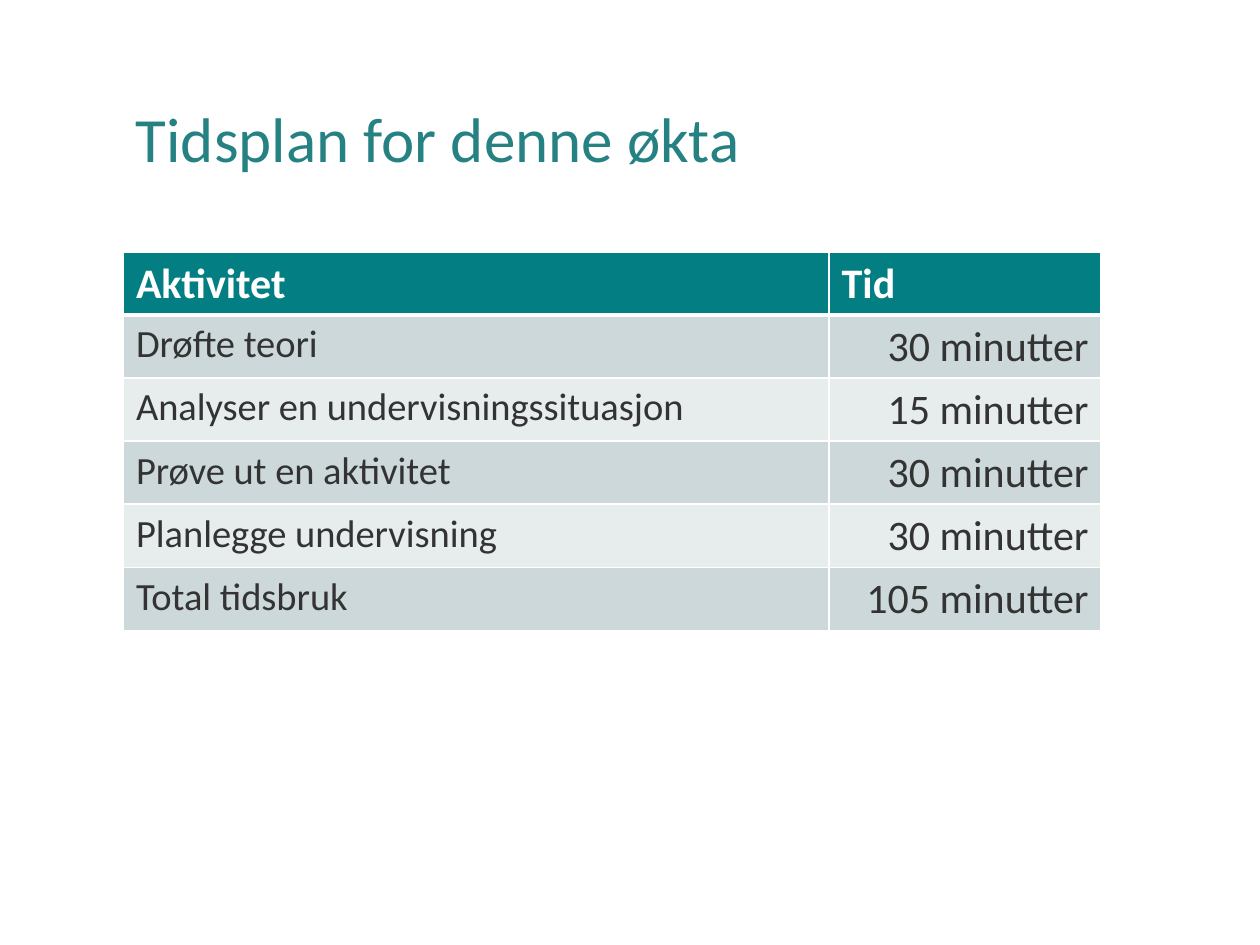
import pptx
import pptx.dml.color
import pptx.enum.text
import pptx.oxml
import pptx.oxml.ns
import pptx.util
from pptx.util import Inches

ALIGN = pptx.enum.text.PP_ALIGN
ANCHOR = pptx.enum.text.MSO_ANCHOR
WHITE = "FFFFFF"
TITLE = "268183"
HEADER = "037F83"
BANDS = ("CCD8D9", "E7ECED")
INK = "333333"


def color(value):
    return pptx.dml.color.RGBColor.from_string(value)


class Deck:
    font = "Calibri"

    def __init__(self, width, height):
        self.prs = pptx.Presentation()
        self.prs.slide_width = Inches(width)
        self.prs.slide_height = Inches(height)
        self.slide = self.prs.slides.add_slide(self.prs.slide_layouts[6])

    def set_text(self, p, text, size, ink, bold=False, align=ALIGN.LEFT):
        p.text = text
        p.alignment = align
        p.font.name = self.font
        p.font.size = pptx.util.Pt(size)
        p.font.bold = bold
        p.font.color.rgb = color(ink)

    def title(self, text, left, top, width, height):
        sp = self.slide.shapes.add_textbox(
            Inches(left), Inches(top), Inches(width), Inches(height))
        tf = sp.text_frame
        tf.word_wrap = True
        tf.vertical_anchor = ANCHOR.MIDDLE
        p = tf.paragraphs[0]
        self.set_text(p, text, 36, TITLE)
        p.line_spacing = 0.9

    def borders(self, cell, top, bottom):
        props = cell._tc.get_or_add_tcPr()
        widths = {"lnL": 1, "lnR": 1, "lnT": top, "lnB": bottom}
        for i, (tag, width) in enumerate(widths.items()):
            props.insert(i, pptx.oxml.parse_xml(
                f'<a:{tag} {pptx.oxml.ns.nsdecls("a")} w="{pptx.util.Pt(width)}">'
                f'<a:solidFill><a:srgbClr val="{WHITE}"/></a:solidFill></a:{tag}>'))

    def table(self, rows, left, top, widths, row_height):
        table = self.slide.shapes.add_table(
            len(rows), len(widths), Inches(left), Inches(top),
            Inches(sum(widths)), Inches(row_height * len(rows))).table
        for column, width in zip(table.columns, widths):
            column.width = Inches(width)
        for r, row in enumerate(rows):
            header = r == 0
            for c, text in enumerate(row):
                cell = table.cell(r, c)
                cell.fill.solid()
                cell.fill.fore_color.rgb = color(HEADER if header else BANDS[(r - 1) % 2])
                self.borders(cell, 3 if r == 1 else 1, 3 if header else 1)
                p = cell.text_frame.paragraphs[0]
                if header:
                    self.set_text(p, text, 24, WHITE, bold=True)
                elif c == 0:
                    self.set_text(p, text, 22, INK)
                else:
                    self.set_text(p, text, 24, INK, align=ALIGN.RIGHT)


def main():
    deck = Deck(10, 7.5)
    deck.title("Tidsplan for denne økta", 0.98, 0.4, 8.29, 1.45)
    deck.table([
        ("Aktivitet", "Tid"),
        ("Drøfte teori", "30 minutter"),
        ("Analyser en undervisningssituasjon", "15 minutter"),
        ("Prøve ut en aktivitet", "30 minutter"),
        ("Planlegge undervisning", "30 minutter"),
        ("Total tidsbruk", "105 minutter"),
    ], 0.98, 2, (5.6, 2.16), 0.5)
    deck.prs.save("out.pptx")


if __name__ == "__main__":
    main()
